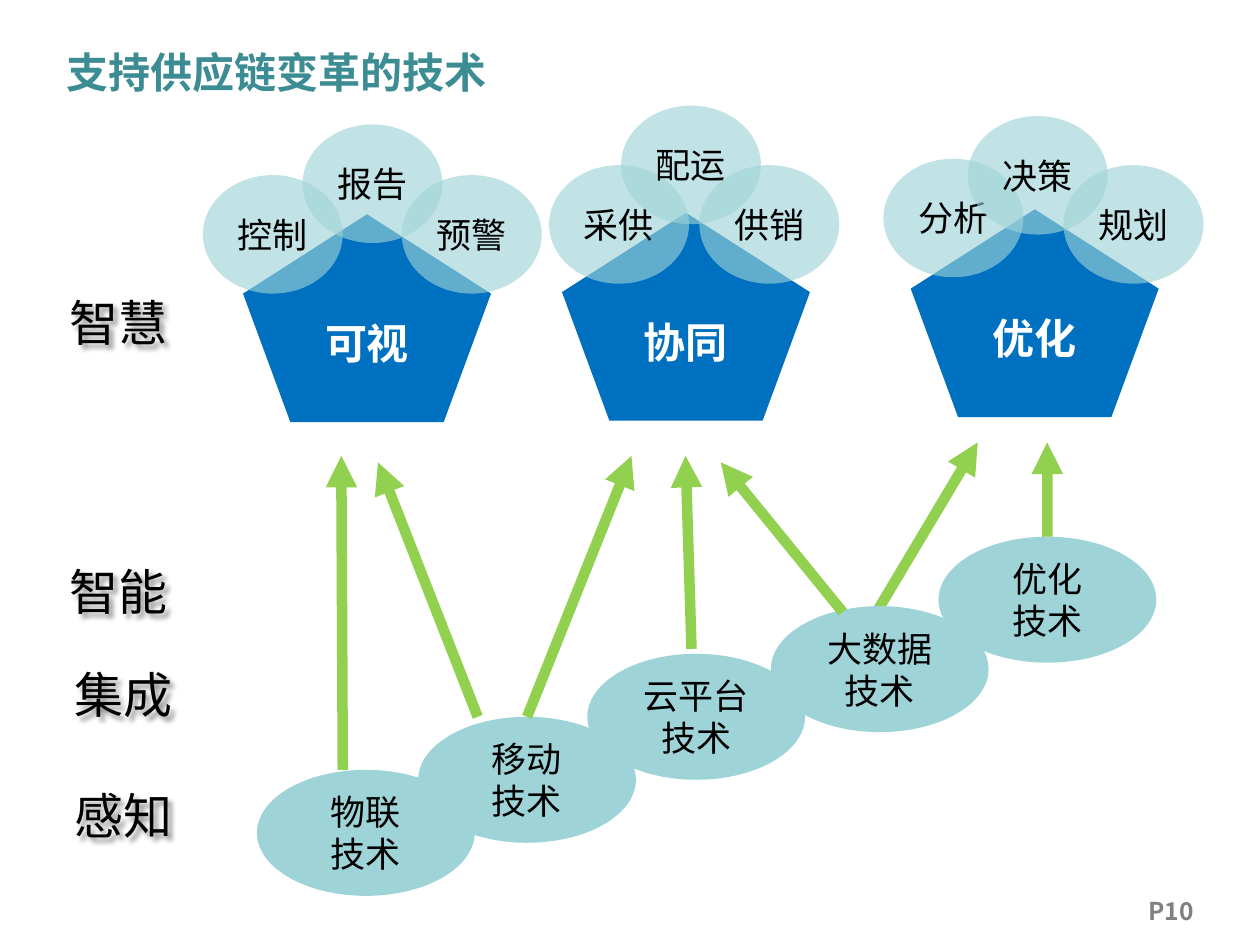
from lxml.etree import SubElement
from pptx import Presentation
from pptx.dml.color import RGBColor
from pptx.enum.shapes import MSO_CONNECTOR, MSO_SHAPE
from pptx.enum.text import MSO_ANCHOR as Anchor, PP_ALIGN as Align
from pptx.oxml.ns import qn
from pptx.util import Cm, Pt

COLORS = {
    "title": "3C8C93", "page": "808080", "text": "000000", "white": "FFFFFF",
    "pentagon": "0070C0", "ellipse": "9ED3D7", "arrow": "92D050",
}
SANS = "Noto Sans CJK SC"

presentation = Presentation()
presentation.slide_width, presentation.slide_height = Cm(25.4), Cm(19.05)
slide = presentation.slides.add_slide(presentation.slide_layouts[6])


def write(shape, text, size, color, bold=False, font=SANS, align=Align.CENTER,
          anchor=Anchor.MIDDLE, wrap=True):
    frame = shape.text_frame
    frame.text = text
    frame.word_wrap = wrap
    frame.vertical_anchor = anchor
    for paragraph in frame.paragraphs:
        paragraph.alignment = align
        paragraph.font.size = Pt(size)
        paragraph.font.bold = bold
        paragraph.font.color.rgb = RGBColor.from_string(COLORS[color])
        paragraph.font.name = font
        defaults = paragraph._p.get_or_add_pPr().find(qn("a:defRPr"))
        SubElement(defaults, qn("a:ea"), typeface=font)


def add_filled(kind, left, top, width, height, color):
    """Add a preset shape with a plain fill, no outline and no shadow."""
    shape = slide.shapes.add_shape(kind, Cm(left), Cm(top), Cm(width), Cm(height))
    shape.shadow.inherit = False
    shape.fill.solid()
    shape.fill.fore_color.rgb = RGBColor.from_string(COLORS[color])
    shape.line.fill.background()
    return shape


page_number = slide.shapes.add_textbox(Cm(22.81), Cm(17.93), Cm(1.6), Cm(0.76))
write(page_number, "P10", 14, "page", bold=True, anchor=Anchor.TOP, wrap=False)

title = slide.shapes.add_textbox(Cm(1.09), Cm(0.43), Cm(14.71), Cm(2.03))
write(title, "支持供应链变革的技术", 24, "title", bold=True, align=Align.LEFT)

# Levels on the left, with a soft text shadow
levels = [("智慧", 0.69, 5.77), ("智能", 0.69, 11.2),
          ("集成", 0.79, 13.28), ("感知", 0.79, 15.72)]
for text, left, top in levels:
    level = slide.shapes.add_textbox(Cm(left), Cm(top), Cm(3.4), Cm(1.6))
    write(level, text, 28, "text", font="Arial", anchor=Anchor.TOP, wrap=False)
    effects = SubElement(level._element.spPr, qn("a:effectLst"))
    shadow = SubElement(effects, qn("a:outerShdw"), blurRad="38100",
                        dist="38100", dir="2700000", algn="tl")
    shadow_color = SubElement(shadow, qn("a:srgbClr"), val=COLORS["text"])
    SubElement(shadow_color, qn("a:alpha"), val="43000")

# Goals: a pentagon each, with three translucent topics on its top
goals = [
    ("可视", 4.9, 4.32, [("控制", 4.09, 3.53), ("报告", 6.1, 2.51), ("预警", 8.1, 3.53)]),
    ("协同", 11.33, 4.29, [("采供", 11.07, 3.33), ("供销", 14.1, 3.33), ("配运", 12.52, 2.13)]),
    ("优化", 18.36, 4.22, [("分析", 17.81, 3.2), ("决策", 19.51, 2.34), ("规划", 21.44, 3.33)]),
]
for text, left, top, topics in goals:
    pentagon = add_filled(MSO_SHAPE.REGULAR_PENTAGON, left, top, 5, 4.19, "pentagon")
    write(pentagon, text, 24, "white", bold=True)
    for topic, topic_left, topic_top in topics:
        ellipse = add_filled(MSO_SHAPE.OVAL, topic_left, topic_top, 2.82, 2.39, "ellipse")
        fill_color = ellipse._element.spPr.find(qn("a:solidFill"))[0]
        SubElement(fill_color, qn("a:alpha"), val="62000")
        write(ellipse, topic, 20, "text")

# Technologies and arrows, from back to front.
# Each arrow: start, end, technology whose top it starts from (if any).
stages = [
    ([("物联", 5.18, 15.52), ("移动", 8.43, 14.45)],
     [((6.91, 15.52), (6.88, 9.19), None), ((9.63, 14.45), (7.62, 9.32), None)]),
    ([("优化", 18.92, 10.82)],
     [((17.7, 12.29), (19.71, 8.92), None), ((21.13, 10.82), (21.11, 8.92), "优化")]),
    ([("大数据", 15.54, 12.22), ("云平台", 11.84, 13.18)],
     [((13.94, 13.08), (13.82, 9.19), None), ((16.99, 12.34), (14.53, 9.32), None),
      ((10.67, 14.45), (12.73, 9.19), "移动")]),
]
technologies = {}
for ellipses, arrows in stages:
    for name, left, top in ellipses:
        ellipse = add_filled(MSO_SHAPE.OVAL, left, top, 4.39, 2.54, "ellipse")
        write(ellipse, name + "\n技术", 20, "text")
        technologies[name] = ellipse
    for start, end, source in arrows:
        arrow = slide.shapes.add_connector(
            MSO_CONNECTOR.STRAIGHT, *(Cm(value) for value in start + end))
        if source:
            arrow.begin_connect(technologies[source], 0)
        arrow.line.width = Pt(6)
        arrow.line.color.rgb = RGBColor.from_string(COLORS["arrow"])
        SubElement(arrow.line._get_or_add_ln(), qn("a:tailEnd"), type="triangle")
        SubElement(arrow._element.spPr, qn("a:effectLst"))

presentation.save("out.pptx")
